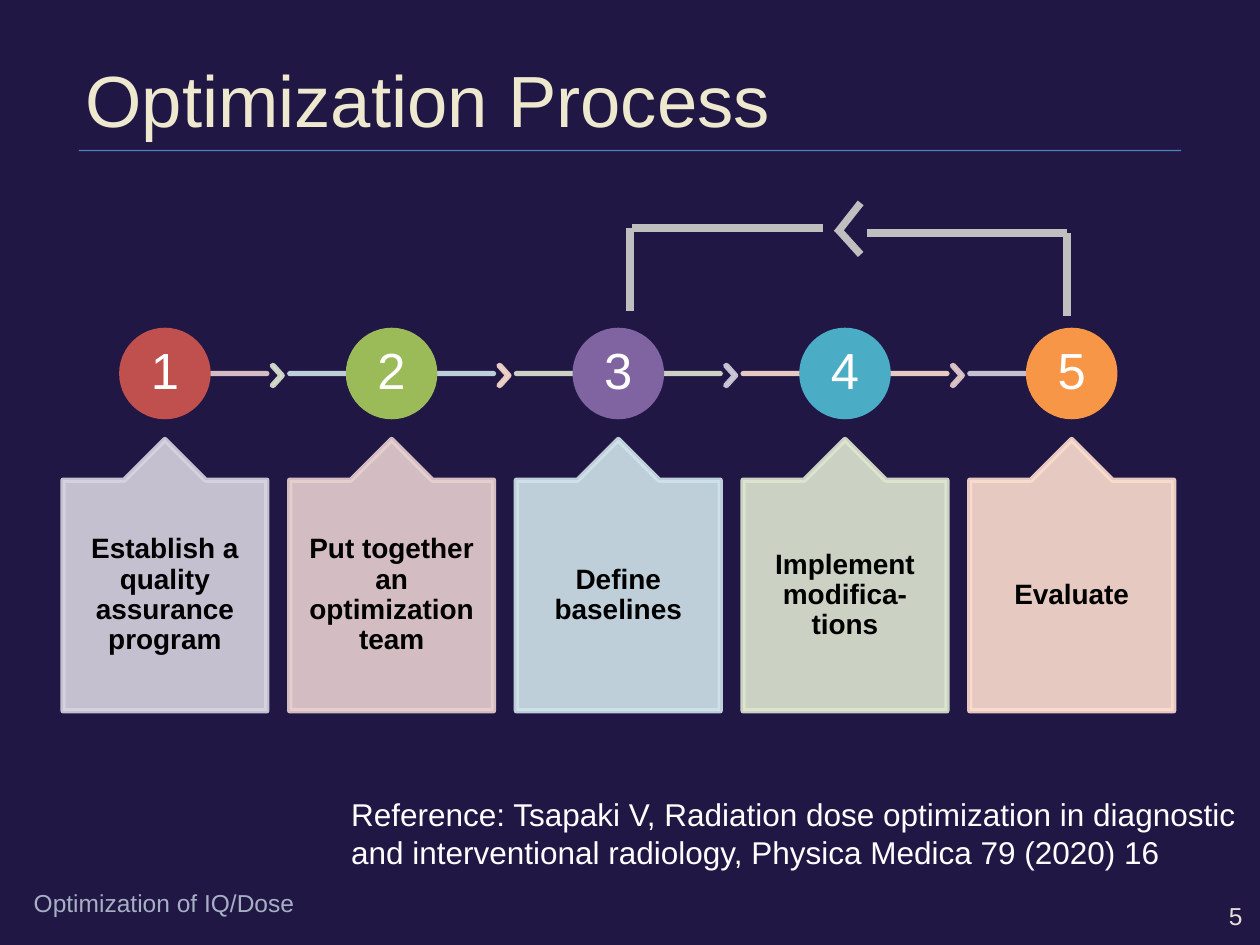
from dataclasses import dataclass

from lxml import etree
from pptx import Presentation
from pptx.dml.color import RGBColor
from pptx.enum.shapes import MSO_CONNECTOR, MSO_SHAPE
from pptx.enum.text import MSO_ANCHOR, MSO_AUTO_SIZE, PP_ALIGN
from pptx.oxml.ns import qn
from pptx.util import Cm, Pt

STRAIGHT = MSO_CONNECTOR.STRAIGHT
RECTANGLE, OVAL, CHEVRON = MSO_SHAPE.RECTANGLE, MSO_SHAPE.OVAL, MSO_SHAPE.CHEVRON
TOP, MIDDLE, BOTTOM = MSO_ANCHOR.TOP, MSO_ANCHOR.MIDDLE, MSO_ANCHOR.BOTTOM
LEFT, CENTER, RIGHT = PP_ALIGN.LEFT, PP_ALIGN.CENTER, PP_ALIGN.RIGHT
NO_FIT = MSO_AUTO_SIZE.NONE
TITLE_ONLY = 5


@dataclass(frozen=True)
class Theme:
    font: str = "Arial"
    background: str = "201745"
    title: str = "EDE8CE"
    rule: str = "4F81BD"
    light: str = "FFFFFF"
    dark: str = "000000"
    footer: str = "A7AFC5"
    number: str = "E3E1D7"
    loop: str = "BFBFBF"
    accents: tuple = ("C0504D", "9BBB59", "8064A2", "4BACC6", "F79646")
    tints: tuple = ("D8D3E0", "E8D0D0", "D0E3EA", "DEE7D1", "FCDDCF")
    tint_opacity: int = 90
    title_size: float = 41.4
    badge_size: int = 29
    card_size: int = 16
    reference_size: int = 18
    small_size: int = 14
    outline: float = 3
    loop_width: float = 4.25


class SlideBuilder:
    def __init__(self, page, theme):
        self.page = page
        self.theme = theme
        fill = page.background.fill
        fill.solid()
        fill.fore_color.rgb = RGBColor.from_string(theme.background)

    def set_text(self, box, text, size, color, align=LEFT, anchor=TOP, bold=False):
        frame = box.text_frame
        frame.text = text
        frame.word_wrap = True
        frame.auto_size = NO_FIT
        frame.vertical_anchor = anchor
        for para in frame.paragraphs:
            para.alignment = align
            for span in para.runs:
                span.font.name = self.theme.font
                span.font.size = Pt(size)
                span.font.bold = bold
                span.font.color.rgb = RGBColor.from_string(color)

    def paint(self, shape, color, outline=0, opacity=100):
        shape.shadow.inherit = False
        shape.fill.solid()
        shape.fill.fore_color.rgb = RGBColor.from_string(color)
        if outline:
            shape.line.width = Pt(outline)
            shape.line.color.rgb = RGBColor.from_string(color)
        else:
            shape.line.fill.background()
        self.set_opacity(shape, opacity)

    def set_opacity(self, shape, opacity):
        """Apply one opacity, in percent, to the fill and the line."""
        if opacity < 100:
            for color in shape.element.spPr.iter(qn("a:srgbClr")):
                etree.SubElement(color, qn("a:alpha")).set("val", str(opacity * 1000))

    def title(self, text, left, top, width, height):
        box = self.page.shapes.title
        box.left, box.top, box.width, box.height = map(Cm, (left, top, width, height))
        self.set_text(box, text, self.theme.title_size, self.theme.title, anchor=BOTTOM)
        for properties in box.element.iter(qn("a:pPr")):
            properties.set("marL", str(Cm(0.15)))

    def text(self, text, left, top, width, height, size, color, **layout):
        box = self.page.shapes.add_textbox(*map(Cm, (left, top, width, height)))
        self.set_text(box, text, size, color, **layout)

    def shape(self, kind, left, top, width, height, color, outline=0, opacity=100):
        shape = self.page.shapes.add_shape(kind, *map(Cm, (left, top, width, height)))
        self.paint(shape, color, outline, opacity)
        return shape

    def line(self, start, end, color, width, opacity=100, cap="flat"):
        line = self.page.shapes.add_connector(STRAIGHT, *map(Cm, (*start, *end)))
        line.line.width = Pt(width)
        line.line.color.rgb = RGBColor.from_string(color)
        properties = line.element.spPr
        properties.find(qn("a:ln")).set("cap", cap)
        self.set_opacity(line, opacity)
        etree.SubElement(properties, qn("a:effectLst"))

    def badge(self, number, center_x, center_y, diameter, color):
        left, top = center_x - diameter / 2, center_y - diameter / 2
        circle = self.shape(OVAL, left, top, diameter, diameter, color, self.theme.outline)
        frame = circle.text_frame
        frame.margin_left = frame.margin_right = Cm(0.33)
        frame.margin_top = frame.margin_bottom = Cm(0.33)
        self.set_text(circle, str(number), self.theme.badge_size, self.theme.light,
                      CENTER, MIDDLE)
        frame.paragraphs[0].line_spacing = 0.9

    def card(self, text, left, top, width, height, color):
        """Draw a card whose top edge rises to a point in the middle."""
        peak = 0.82
        middle, right, bottom = left + width / 2, left + width, top + height
        shoulder = top + peak
        outline = [(middle - peak, shoulder), (middle, top), (middle + peak, shoulder),
                   (right, shoulder), (right, bottom), (left, bottom)]
        builder = self.page.shapes.build_freeform(Cm(left), Cm(shoulder))
        builder.add_line_segments([(Cm(x), Cm(y)) for x, y in outline])
        card = builder.convert_to_shape()
        self.paint(card, color, self.theme.outline, self.theme.tint_opacity)
        frame = card.text_frame
        frame.margin_left = frame.margin_right = Cm(0.33)
        frame.margin_top, frame.margin_bottom = Cm(1.27), Cm(0.46)
        self.set_text(card, text, self.theme.card_size, self.theme.dark, CENTER, MIDDLE, True)
        frame.paragraphs[0].line_spacing = 0.9


def add_steps(builder, steps):
    theme = builder.theme
    first_left, pitch, width, axis = 1.27, 4.57, 4.11, 7.53
    last = len(steps) - 1
    for index, step in enumerate(steps):
        left = first_left + index * pitch
        center = left + width / 2
        bar_tint = theme.tints[(index + 1) % len(theme.tints)]
        arrow_tint = theme.tints[(index + 3) % len(theme.tints)]
        start = center if index == 0 else left
        end = center if index == last else left + width
        builder.line((start, axis), (end, axis), bar_tint, theme.outline,
                     theme.tint_opacity, "rnd")
        if index < last:
            arrow = builder.shape(CHEVRON, left + 4.22, axis - 0.16, 0.2, 0.4, arrow_tint,
                                  theme.outline, theme.tint_opacity)
            arrow.adjustments[0] = 0.9
        builder.badge(index + 1, center, axis, 1.74, theme.accents[index])
        builder.card(step, left, 8.86, width, 5.47, theme.tints[index])


def add_feedback_loop(builder):
    left, right, left_top, right_top, tip = 12.7, 21.51, 4.6, 4.7, 16.87
    segments = [
        ((right, 6.38), (right, right_top)),
        ((left, 6.27), (left, left_top)),
        ((16.59, left_top), (12.75, left_top)),
        ((right, right_top), (17.48, right_top)),
        ((17.35, 4.09), (tip, right_top)),
        ((17.35, 5.13), (tip, left_top)),
    ]
    for start, end in segments:
        builder.line(start, end, builder.theme.loop, builder.theme.loop_width)


def main():
    theme = Theme()
    deck = Presentation()
    deck.slide_width, deck.slide_height = Cm(25.4), Cm(19.05)
    page = deck.slides.add_slide(deck.slide_layouts[TITLE_ONLY])
    builder = SlideBuilder(page, theme)

    builder.shape(RECTANGLE, 1.59, 3.02, 22.22, 0.03, theme.rule)
    builder.title("Optimization Process", 1.32, 0.81, 22.86, 2.18)
    add_steps(builder, [
        "Establish a quality assurance program",
        "Put together an optimization team",
        "Define baselines",
        "Implement modifica-tions",
        "Evaluate",
    ])
    builder.text("Optimization of IQ/Dose", 0.43, 17.78, 11.71, 0.76,
                 theme.small_size, theme.footer)
    builder.text("5", 24, 18.08, 1.3, 0.76, theme.small_size, theme.number,
                 align=RIGHT, anchor=MIDDLE)
    add_feedback_loop(builder)
    builder.text("Reference: Tsapaki V, Radiation dose optimization in diagnostic and "
                 "interventional radiology, Physica Medica 79 (2020) 16",
                 6.83, 15.9, 19.41, 2.57, theme.reference_size, theme.light)
    deck.save("out.pptx")


if __name__ == "__main__":
    main()
